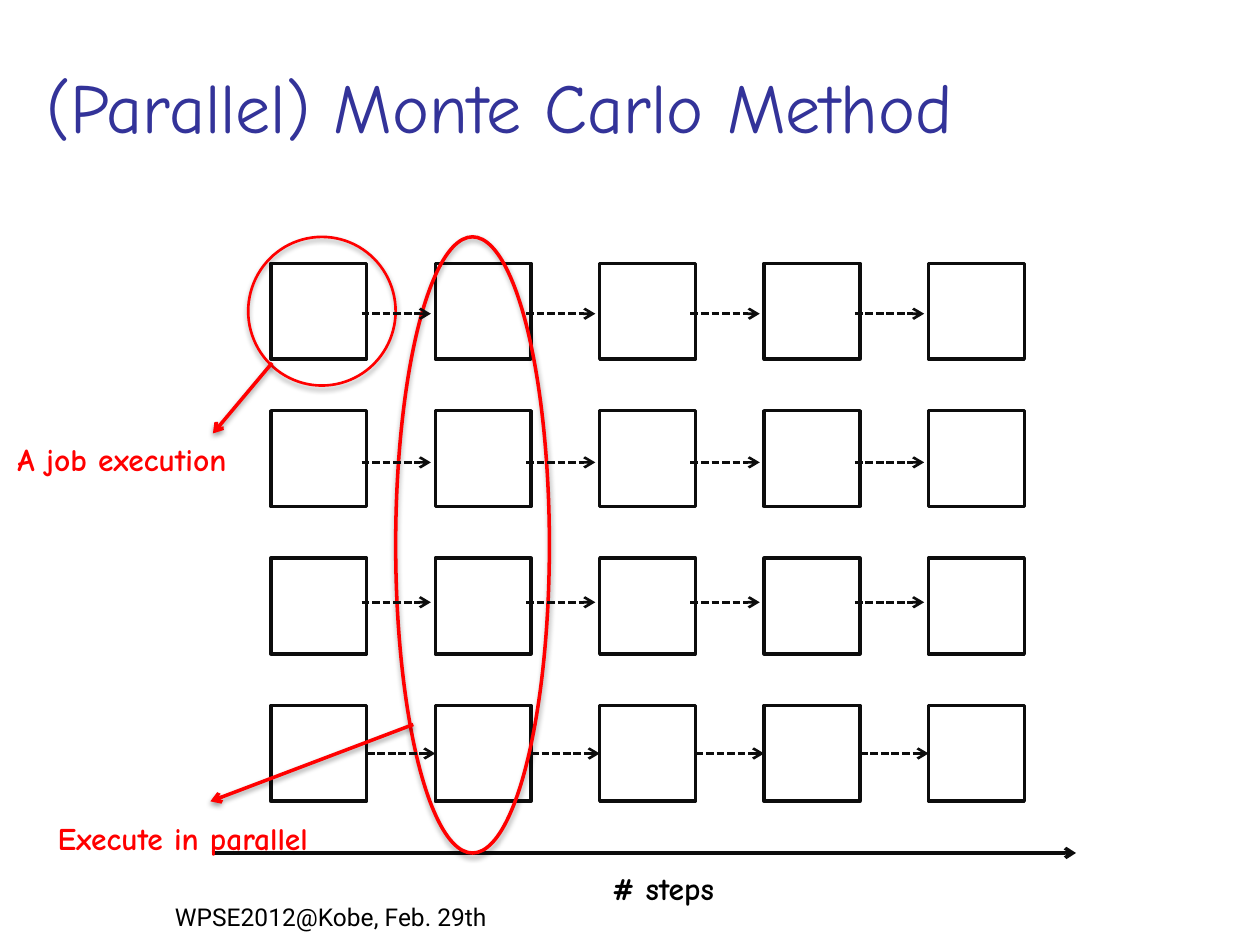
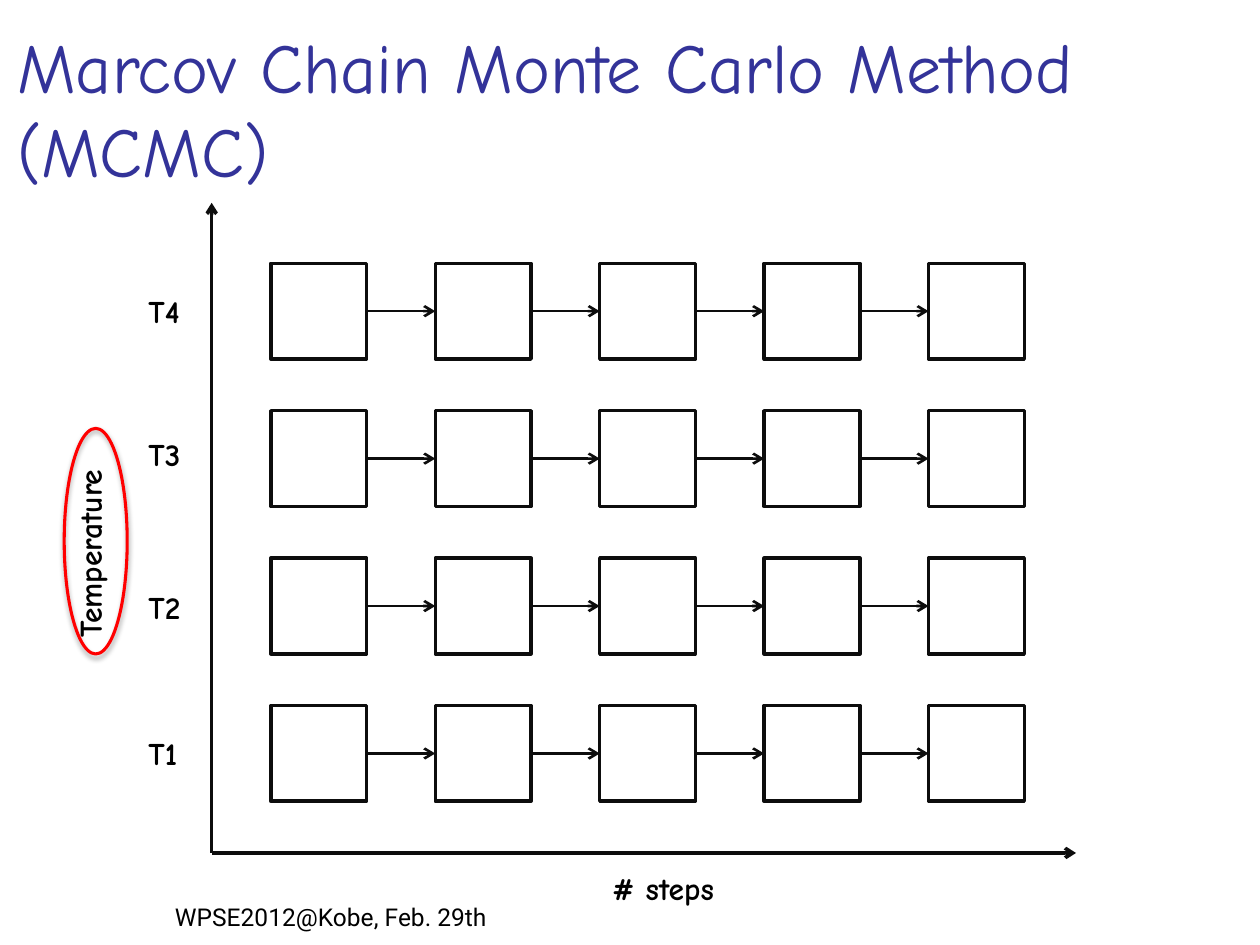
from lxml import etree
from pptx import Presentation
from pptx.dml.color import RGBColor
from pptx.enum import dml, shapes, text
from pptx.oxml.ns import qn
from pptx.util import Inches, Pt

NAVY = RGBColor(0x33, 0x33, 0x99)
INK = RGBColor(0x0D, 0x0D, 0x0D)
BLACK = RGBColor(0, 0, 0)
WHITE = RGBColor(0xFF, 0xFF, 0xFF)
RED = RGBColor(0xFF, 0, 0)
HAND, SANS = "Comic Neue", "Roboto"

BOX = 0.76
FIRST_STEP, LAST_STEP, STEPS = 2.15, 7.37, 5
STEP_PITCH = (LAST_STEP - FIRST_STEP) / (STEPS - 1)
FIRST_CHAIN, CHAIN_PITCH, CHAINS = 2.09, 1.17, 4
AXIS_X, AXIS_Y = 1.68, 6.77
TOP, LEFT, BOTTOM, RIGHT = range(4)


class Deck:
    def __init__(self):
        self.prs = Presentation()
        self.prs.slide_width, self.prs.slide_height = Inches(10), Inches(7.5)
        self.s = None

    def add_slide(self):
        self.s = self.prs.slides.add_slide(self.prs.slide_layouts[6])

    def text(self, lines, x, y, w, h, size=18, color=BLACK, font=HAND,
             bold=True, wrap=False, anchor=text.MSO_ANCHOR.TOP, vert=None):
        sp = self.s.shapes.add_textbox(Inches(x), Inches(y), Inches(w), Inches(h))
        tf = sp.text_frame
        tf.word_wrap = wrap
        tf.vertical_anchor = anchor
        if vert:
            sp.element.txBody.bodyPr.set("vert", vert)
        p = tf.paragraphs[0]
        for i, line in enumerate(lines.split("\n")):
            if i:
                p.add_line_break()
            r = p.add_run()
            r.text = line
            r.font.size, r.font.name, r.font.bold = Pt(size), font, bold
            r.font.color.rgb = color
        return sp

    def title(self, lines, x, y, w):
        sp = self.text(lines, x, y, w, 1.05, 40, NAVY, bold=False, wrap=True,
                       anchor=text.MSO_ANCHOR.BOTTOM)
        sp.text_frame.margin_right = 0

    def footer(self):
        self.text("WPSE2012@Kobe, Feb. 29th", 1.29, 7.19, 5.87, 0.25, 14,
                  font=SANS, bold=False, wrap=True, anchor=text.MSO_ANCHOR.BOTTOM)

    def shadow(self, effects, opacity, blur, dist):
        shd = etree.SubElement(effects, qn("a:outerShdw"), blurRad=str(Pt(blur)),
                               dist=str(Pt(dist)), dir="5400000", rotWithShape="0")
        clr = etree.SubElement(shd, qn("a:srgbClr"), val=str(BLACK))
        etree.SubElement(clr, qn("a:alpha"), val=str(opacity * 1000))

    def shape(self, kind, x, y, w, h, color, width):
        sp = self.s.shapes.add_shape(kind, Inches(x), Inches(y), Inches(w), Inches(h))
        sp.shadow.inherit = False
        sp.line.color.rgb, sp.line.width = color, Pt(width)
        return sp

    def box(self, x, y):
        sp = self.shape(shapes.MSO_SHAPE.RECTANGLE, x, y, BOX, BOX, INK, 2)
        sp.fill.solid()
        sp.fill.fore_color.rgb = WHITE
        return sp

    def ring(self, x, y, w, h, width):
        sp = self.shape(shapes.MSO_SHAPE.OVAL, x, y, w, h, RED, width)
        sp.fill.background()
        self.shadow(sp.element.spPr.find(qn("a:effectLst")), 35, 3.1, 1.8)

    def arrow(self, x1, y1, x2, y2, color=INK, width=2, dashed=False, shadow=False):
        sp = self.s.shapes.add_connector(shapes.MSO_CONNECTOR.STRAIGHT, Inches(x1),
                                         Inches(y1), Inches(x2), Inches(y2))
        sp.line.color.rgb, sp.line.width = color, Pt(width)
        if dashed:
            sp.line.dash_style = dml.MSO_LINE.SQUARE_DOT
        etree.SubElement(sp.line._get_or_add_ln(), qn("a:tailEnd"), type="arrow")
        effects = etree.SubElement(sp.element.spPr, qn("a:effectLst"))
        if shadow:
            self.shadow(effects, 38, 3.1, 1.6)
        return sp

    def link(self, source, target, dashed=False):
        sp = self.arrow(0, 0, 1, 1, width=1.5, dashed=dashed)
        sp.begin_connect(source, RIGHT)
        sp.end_connect(target, LEFT)

    def step_grid(self):
        self.arrow(AXIS_X, AXIS_Y, 8.54, AXIS_Y)
        self.text("# steps", 4.76, 6.85, 1.16, 0.4)
        return [[self.box(FIRST_STEP + step * STEP_PITCH,
                          FIRST_CHAIN + chain * CHAIN_PITCH)
                 for step in range(STEPS)] for chain in range(CHAINS)]

    def link_chain(self, chain, dashed=False):
        for source, target in zip(chain, chain[1:]):
            self.link(source, target, dashed)


def parallel_slide(deck):
    deck.add_slide()
    deck.title("(Parallel) Monte Carlo Method", 0.27, 0.17, 8.9)
    chains = deck.step_grid()
    deck.ring(3.14, 1.88, 1.22, 4.89, 2)
    deck.ring(1.97, 1.88, 1.17, 1.18, 1.5)
    deck.arrow(2.16, 2.88, 1.69, 3.44, RED, shadow=True)
    deck.text("A job execution", 0.04, 3.44, 2.14, 0.4, color=RED)
    deck.arrow(3.28, 5.75, 1.67, 6.36, RED, shadow=True)
    deck.text("Execute in parallel", 0.36, 6.45, 2.48, 0.4, color=RED)
    for y in (2.49, 3.67, 4.78):
        for step in range(STEPS - 1):
            x = 2.87 + step * STEP_PITCH
            deck.arrow(x, y, x + 0.55, y, width=1.5, dashed=True)
    deck.link_chain(chains[-1], dashed=True)
    deck.footer()


def markov_slide(deck):
    deck.add_slide()
    for chain in deck.step_grid():
        deck.link_chain(chain)
    deck.arrow(AXIS_X, AXIS_Y, AXIS_X, 1.61)
    deck.ring(0.51, 3.4, 0.5, 1.79, 1.75)
    deck.text("Temperature", 0.51, 3.49, 0.5, 1.67, vert="vert270")
    for label, y in (("T4", 2.27), ("T3", 3.4), ("T2", 4.62), ("T1", 5.78)):
        deck.text(label, 1.08, y, 0.53, 0.4)
    deck.title("Marcov Chain Monte Carlo Method\n(MCMC)", 0.04, 0.52, 9.53)
    deck.footer()


def main():
    deck = Deck()
    parallel_slide(deck)
    markov_slide(deck)
    deck.prs.save("out.pptx")


if __name__ == "__main__":
    main()
